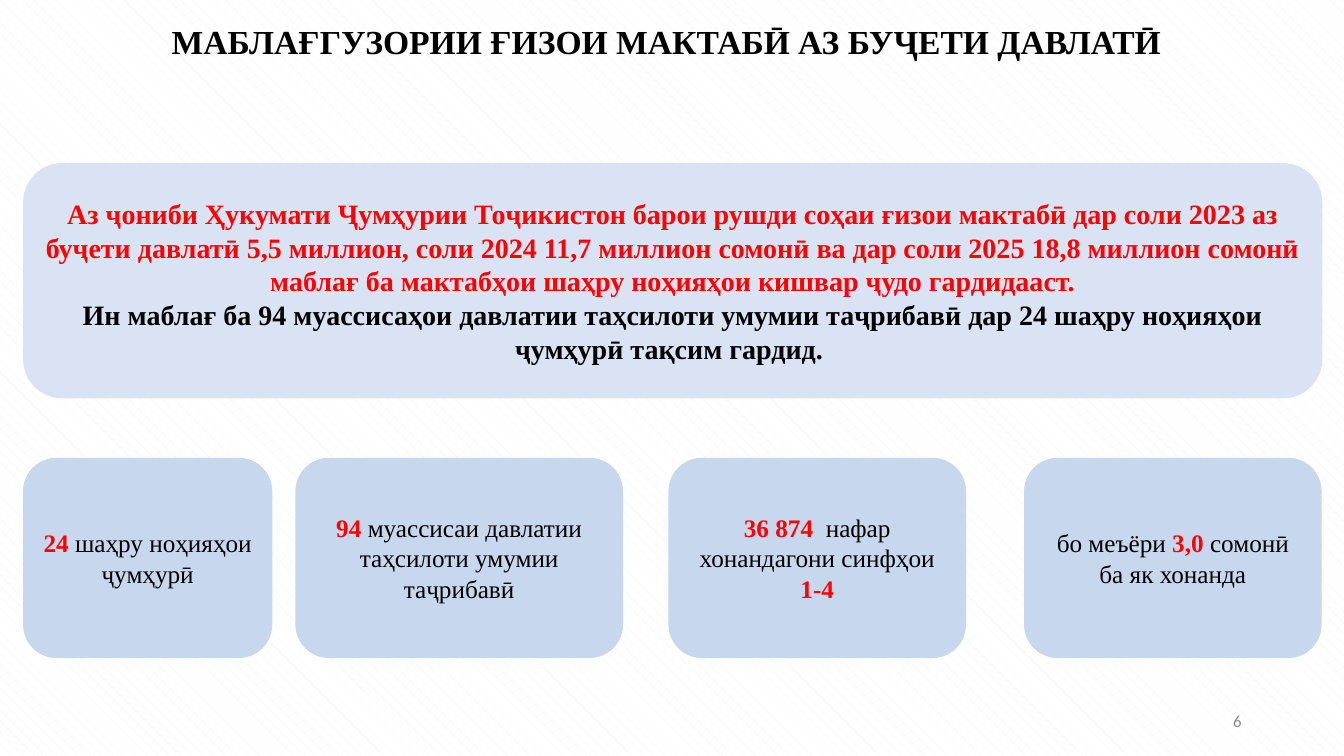
from lxml import etree
from pptx import Presentation
from pptx.dml.color import RGBColor
from pptx.enum.dml import MSO_PATTERN
from pptx.enum.shapes import MSO_SHAPE
from pptx.enum.text import MSO_ANCHOR, MSO_AUTO_SIZE, PP_ALIGN
from pptx.oxml.ns import qn
from pptx.util import Pt

ROUNDED = MSO_SHAPE.ROUNDED_RECTANGLE
SHINGLE = MSO_PATTERN.SHINGLE
TOP, MIDDLE = MSO_ANCHOR.TOP, MSO_ANCHOR.MIDDLE
CENTER, RIGHT = PP_ALIGN.CENTER, PP_ALIGN.RIGHT
FIXED = MSO_AUTO_SIZE.NONE

BLACK, RED, GREY = "000000", "FF0000", "8C8C8C"
PANEL_FILL, CARD_FILL = "DAE3F3", "C7D7ED"
SERIF, SANS = "Times New Roman", "Calibri"

# Each paragraph is a list of runs: (text, colour, bold)
TITLE = [[("МАБЛАҒГУЗОРИИ ҒИЗОИ МАКТАБӢ АЗ БУҶЕТИ ДАВЛАТӢ ", BLACK, True)]]
SUMMARY = [
    [("Аз ҷониби Ҳукумати Ҷумҳурии Тоҷикистон барои рушди соҳаи ғизои мактабӣ "
      "дар соли 2023 аз буҷети давлатӣ 5,5 миллион, соли 2024 11,7 миллион сомонӣ "
      "ва дар соли 2025 18,8 миллион сомонӣ маблағ ба мактабҳои шаҳру ноҳияҳои "
      "кишвар ҷудо гардидааст.", RED, True)],
    [("Ин маблағ ба 94 муассисаҳои давлатии таҳсилоти умумии таҷрибавӣ дар 24 "
      "шаҳру ноҳияҳои ҷумҳурӣ тақсим гардид. ", BLACK, True)],
]
# (left, width, runs)
CARDS = [
    (16.5, 178, [("24", RED, True), (" шаҳру ноҳияҳои ҷумҳурӣ", BLACK, False)]),
    (211, 234, [("94 ", RED, True),
                ("муассисаи давлатии таҳсилоти умумии таҷрибавӣ", BLACK, False)]),
    (477.5, 212.5, [("36 874  ", RED, True),
                    ("нафар хонандагони синфҳои ", BLACK, False),
                    ("1-4", RED, True)]),
    (731.5, 212.5, [("бо меъёри ", BLACK, False), ("3,0 ", RED, True),
                    ("сомонӣ ба як хонанда", BLACK, False)]),
]
PAGE_NUMBER = [[("6", GREY, False)]]

PANEL_BOX = (16.5, 116.5, 928, 168)
CARD_TOP, CARD_HEIGHT = 327, 143
TITLE_BOX = (14.5, 11, 929, 36)
NUMBER_BOX = (678, 500.5, 216, 29)


def color(value):
    return RGBColor.from_string(value)


def lengths(box):
    return [Pt(value) for value in box]


def write(shape, paragraphs, size, name=SERIF, alignment=CENTER, anchor=MIDDLE):
    frame = shape.text_frame
    for key, value in {"word_wrap": True, "auto_size": FIXED,
                       "vertical_anchor": anchor}.items():
        setattr(frame, key, value)
    for index, runs in enumerate(paragraphs):
        paragraph = frame.add_paragraph() if index else frame.paragraphs[0]
        paragraph.alignment = alignment
        for text, text_color, bold in runs:
            run = paragraph.add_run()
            run.text = text
            for key, value in {"size": Pt(size), "name": name, "bold": bold}.items():
                setattr(run.font, key, value)
            run.font.color.rgb = color(text_color)


def add_rounded_box(slide, box, fill, paragraphs, size):
    shape = slide.shapes.add_shape(ROUNDED, *lengths(box))
    shape.shadow.inherit = False
    shape.fill.solid()
    shape.fill.fore_color.rgb = color(fill)
    shape.line.fill.background()
    write(shape, paragraphs, size)


def add_text_shadow(run):
    effects = etree.Element(qn("a:effectLst"))
    shadow = etree.SubElement(effects, qn("a:outerShdw"), blurRad="38100",
                              dist="38100", dir="2700000", algn="tl")
    shade = etree.SubElement(shadow, qn("a:srgbClr"), val=BLACK)
    etree.SubElement(shade, qn("a:alpha"), val="43000")
    run.font.fill  # the effect list must follow the text fill
    run._r.rPr.find(qn("a:solidFill")).addnext(effects)


def main():
    presentation = Presentation()
    presentation.slide_width, presentation.slide_height = Pt(960), Pt(540)
    slide = presentation.slides.add_slide(presentation.slide_layouts[5])

    background = slide.background.fill
    background.patterned()
    background.pattern = SHINGLE
    background.fore_color.rgb = color("F2F2F2")
    background.back_color.rgb = color("FFFFFF")

    title = slide.shapes.title
    title.left, title.top, title.width, title.height = lengths(TITLE_BOX)
    write(title, TITLE, 24, anchor=TOP)
    add_text_shadow(title.text_frame.paragraphs[0].runs[0])

    add_rounded_box(slide, PANEL_BOX, PANEL_FILL, SUMMARY, 20)
    for left, width, runs in CARDS:
        add_rounded_box(slide, (left, CARD_TOP, width, CARD_HEIGHT),
                        CARD_FILL, [runs], 18)

    number = slide.shapes.add_textbox(*lengths(NUMBER_BOX))
    write(number, PAGE_NUMBER, 12, name=SANS, alignment=RIGHT)

    presentation.save("out.pptx")


if __name__ == "__main__":
    main()
